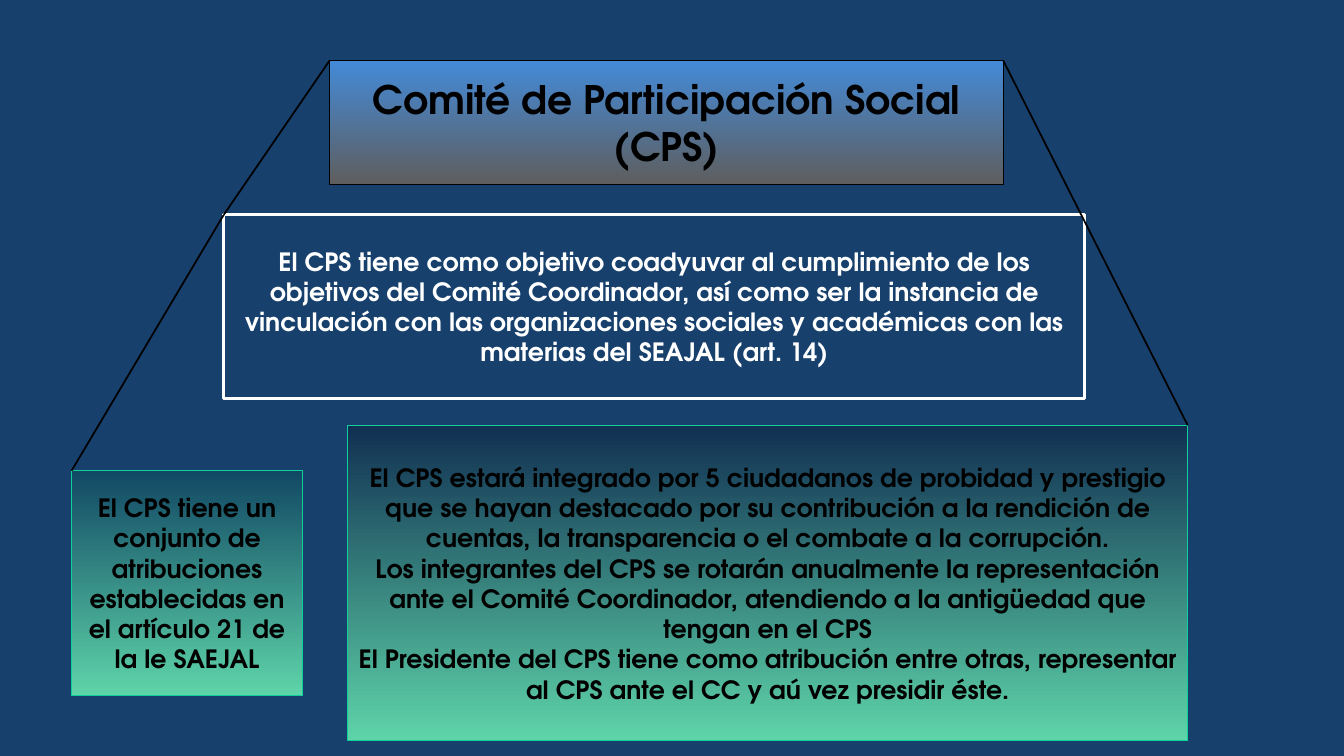
import pptx
import pptx.dml.color
import pptx.enum.shapes
import pptx.enum.text
import pptx.util
from pptx.util import Inches

FONT = "TeX Gyre Adventor"
NAVY, BLACK, WHITE, GREEN, MINT = "17406D", "000000", "FFFFFF", "10CF9B", "5ED4A9"

TITLE = "Comité de Participación Social (CPS)"
OBJECTIVE = [
    "El CPS tiene como objetivo coadyuvar al cumplimiento de los objetivos del Comité "
    "Coordinador, así como ser la instancia de vinculación con las organizaciones sociales "
    "y académicas con las materias del SEAJAL (art. 14)"
]
POWERS = [
    "El CPS tiene un conjunto de atribuciones establecidas en el artículo 21 de la le SAEJAL"
]
MEMBERS = [
    "El CPS estará integrado por 5 ciudadanos de probidad y prestigio que se hayan destacado "
    "por su contribución a la rendición de cuentas, la transparencia o el combate a la "
    "corrupción.",
    "Los integrantes del CPS se rotarán anualmente la representación ante el Comité "
    "Coordinador, atendiendo a la antigüedad que tengan en el CPS",
    "El Presidente del CPS tiene como atribución entre otras, representar al CPS ante el CC "
    "y aú vez presidir éste.",
]


def rgb(hex_color):
    """Return the colour for a hex string."""
    return pptx.dml.color.RGBColor.from_string(hex_color)


def write_text(box, paragraphs, size=18, color=BLACK):
    """Write bold, centred paragraphs into a box."""
    frame = box.text_frame
    frame.word_wrap = True
    frame.auto_size = pptx.enum.text.MSO_AUTO_SIZE.NONE
    frame.vertical_anchor = pptx.enum.text.MSO_ANCHOR.MIDDLE
    frame.text = "\n".join(paragraphs)
    for paragraph in frame.paragraphs:
        paragraph.alignment = pptx.enum.text.PP_ALIGN.CENTER
        paragraph.font.name = FONT
        paragraph.font.size = pptx.util.Pt(size)
        paragraph.font.bold = True
        paragraph.font.color.rgb = rgb(color)


def paint(box, colors, outline, width=0.75):
    """Fill a box with one colour or a downward gradient, and outline it."""
    if len(colors) == 1:
        box.fill.solid()
        box.fill.fore_color.rgb = rgb(colors[0])
    else:
        box.fill.gradient()
        box.fill.gradient_angle = 270
        for stop, color in zip(box.fill.gradient_stops, colors):
            stop.color.rgb = rgb(color)
    box.line.color.rgb = rgb(outline)
    box.line.width = pptx.util.Pt(width)


def add_title(slide, bounds):
    """Place and format the slide title."""
    title = slide.shapes.title
    title.left, title.top, title.width, title.height = map(Inches, bounds)
    paint(title, ["448AD7", "5E5E5E"], BLACK)
    write_text(title, [TITLE], size=28)


def add_panel(slide, bounds, paragraphs, colors, outline, width=0.75, text_color=BLACK):
    """Add a rectangle that holds text."""
    panel = slide.shapes.add_shape(
        pptx.enum.shapes.MSO_SHAPE.RECTANGLE, *map(Inches, bounds))
    panel.shadow.inherit = False
    paint(panel, colors, outline, width)
    write_text(panel, paragraphs, color=text_color)


def add_link(slide, start, end):
    """Add a straight black line between two corners."""
    link = slide.shapes.add_connector(
        pptx.enum.shapes.MSO_CONNECTOR.STRAIGHT, *map(Inches, start + end))
    link.line.color.rgb = rgb(BLACK)
    link.line.width = pptx.util.Pt(1.25)
    link._element.spPr.append(pptx.oxml.parse_xml(
        '<a:effectLst xmlns:a="http://schemas.openxmlformats.org/drawingml/2006/main"/>'))


def main():
    """Build the slide and save it."""
    deck = pptx.Presentation()
    deck.slide_width, deck.slide_height = Inches(13.33), Inches(7.5)
    slide = deck.slides.add_slide(deck.slide_layouts.get_by_name("Title Only"))
    slide.background.fill.solid()
    slide.background.fill.fore_color.rgb = rgb(NAVY)

    title = (3.27, 0.6, 6.68, 1.23)
    objective = (2.22, 2.13, 8.54, 1.82)
    powers = (0.71, 4.67, 2.29, 2.23)
    members = (3.45, 4.22, 8.33, 3.13)

    add_title(slide, title)
    add_panel(slide, objective, OBJECTIVE, [NAVY], WHITE, width=2, text_color=WHITE)
    add_panel(slide, powers, POWERS, ["114864", MINT], GREEN)
    add_panel(slide, members, MEMBERS, ["113052", MINT], GREEN)

    add_link(slide, powers[:2], objective[:2])
    add_link(slide, objective[:2], title[:2])
    add_link(slide, (title[0] + title[2], title[1]), (members[0] + members[2], members[1]))
    deck.save("out.pptx")


if __name__ == "__main__":
    main()
